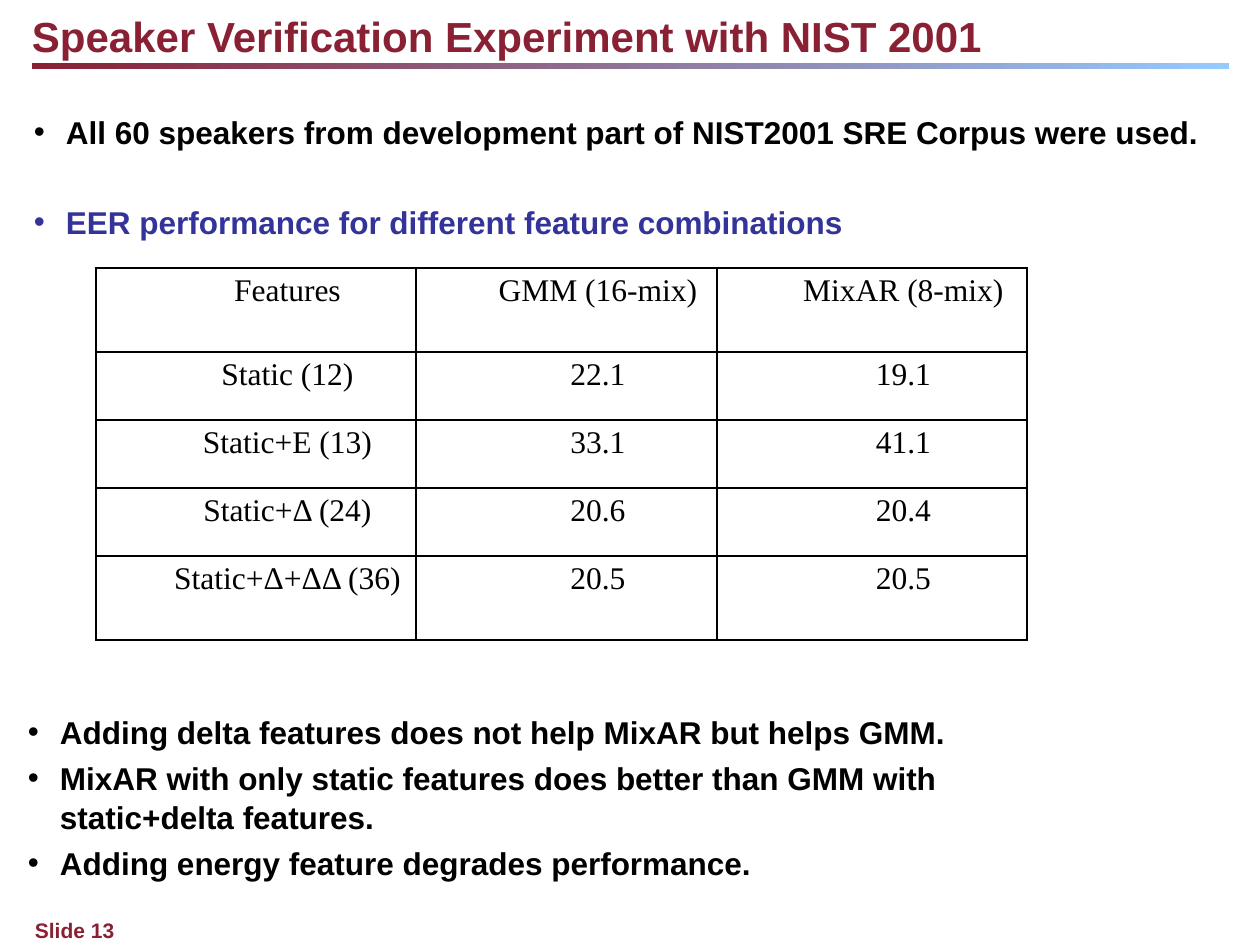
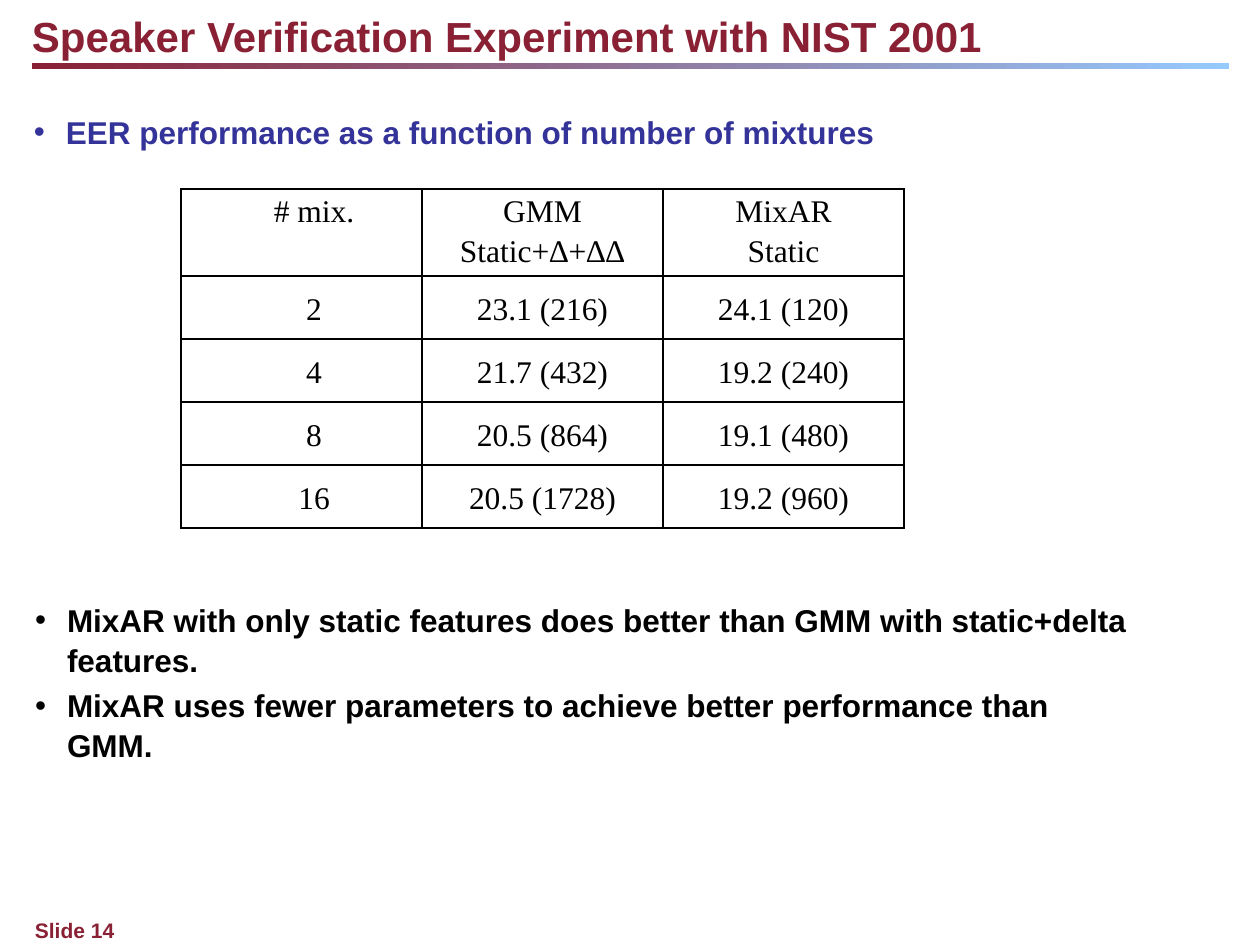
from dataclasses import dataclass

import pptx
import pptx.dml.color
import pptx.enum.shapes
import pptx.enum.text
import pptx.oxml
import pptx.oxml.ns
import pptx.util

COLORS = {"wine": "892034", "sky": "95CAFF", "blue": "333399", "black": "000000"}
SANS, SERIF = "Arial", "Times New Roman"
TITLE = "Speaker Verification Experiment with NIST 2001"
SIZE = 18
TOP = pptx.enum.text.MSO_ANCHOR.TOP
MIDDLE = pptx.enum.text.MSO_ANCHOR.MIDDLE


@dataclass(frozen=True)
class Box:
    left: int
    top: int
    width: int
    height: int


@dataclass(frozen=True)
class Point:
    text: str
    color: str = "black"
    gap: int = 6


@dataclass(frozen=True)
class Block:
    box: Box
    points: list[Point]


@dataclass(frozen=True)
class Indent:
    left: int = 0
    first: int = 0


@dataclass(frozen=True)
class Grid:
    left: int
    top: int
    cols: list[int]
    rows: list[int]
    cells: list[list[str]]
    indents: list[Indent]
    after: int
    anchor: pptx.enum.text.MSO_ANCHOR


@dataclass(frozen=True)
class Page:
    number: int
    blocks: list[Block]
    grid: Grid


BAND = Box(32, 63, 1197, 6)
HEAD = Box(32, 8, 1187, 50)
FOOT = Box(35, 916, 1124, 25)

PAGES = [
    Page(
        13,
        [
            Block(Box(34, 111, 1179, 130), [
                Point("All 60 speakers from development part of NIST2001 SRE Corpus were used."),
                Point("EER performance for different feature combinations", "blue", 50),
            ]),
            Block(Box(28, 711, 1079, 168), [
                Point("Adding delta features does not help MixAR but helps GMM."),
                Point("MixAR with only static features does better than GMM with static+delta features."),
                Point("Adding energy feature degrades performance."),
            ]),
        ],
        Grid(
            96, 268, [320, 301, 310], [84, 68, 68, 68, 84],
            [
                ["Features", "GMM (16-mix)", "MixAR (8-mix)"],
                ["Static (12)", "22.1", "19.1"],
                ["Static+E (13)", "33.1", "41.1"],
                ["Static+Δ (24)", "20.6", "20.4"],
                ["Static+Δ+ΔΔ (36)", "20.5", "20.5"],
            ],
            [Indent(134, -71)] * 3, 12, TOP,
        ),
    ),
    Page(
        14,
        [
            Block(Box(34, 111, 1179, 38), [
                Point("EER performance as a function of number of mixtures", "blue"),
            ]),
            Block(Box(35, 599, 1103, 160), [
                Point("MixAR with only static features does better than GMM with static+delta features."),
                Point("MixAR uses fewer parameters to achieve better performance than GMM."),
            ]),
        ],
        Grid(
            181, 189, [241] * 3, [87] + [63] * 4,
            [
                ["# mix.", "GMM\nStatic+∆+∆∆", "MixAR\nStatic"],
                ["2", "23.1 (216)", "24.1 (120)"],
                ["4", "21.7 (432)", "19.2 (240)"],
                ["8", "20.5 (864)", "19.1 (480)"],
                ["16", "20.5 (1728)", "19.2 (960)"],
            ],
            [Indent(0, 25), Indent(), Indent()], 0, MIDDLE,
        ),
    ),
]


def px(count: int) -> int:
    """Turn px, 126 to the inch, into EMU."""
    return round(count * 914400 / 126)


def rgb(name: str) -> pptx.dml.color.RGBColor:
    return pptx.dml.color.RGBColor.from_string(COLORS[name])


def place(shape, box: Box) -> None:
    shape.left, shape.top = px(box.left), px(box.top)
    shape.width, shape.height = px(box.width), px(box.height)


def clear(frame) -> None:
    """Wrap the text from the top left corner, with no insets."""
    frame.margin_left = frame.margin_right = 0
    frame.margin_top = frame.margin_bottom = 0
    frame.word_wrap = True
    frame.auto_size = pptx.enum.text.MSO_AUTO_SIZE.NONE
    frame.vertical_anchor = TOP


def style(para, font: str, size: int, color: str, bold: bool) -> None:
    for run in para.runs:
        run.font.name, run.font.size = font, pptx.util.Pt(size)
        run.font.color.rgb, run.font.bold = rgb(color), bold


def indent(para, left: int, first: int):
    props = para._p.get_or_add_pPr()
    props.set("marL", str(px(left)))
    props.set("indent", str(px(first)))
    return props


def label(shape, box: Box, text: str, size: int) -> None:
    place(shape, box)
    clear(shape.text_frame)
    shape.text_frame.text = text
    para = shape.text_frame.paragraphs[0]
    para.alignment = pptx.enum.text.PP_ALIGN.LEFT
    para.line_spacing, para.space_before = 1.05, 0
    style(para, SANS, size, "wine", True)


def band(slide) -> None:
    kind = pptx.enum.shapes.MSO_SHAPE.RECTANGLE
    bar = slide.shapes.add_shape(kind, 0, 0, 0, 0)
    place(bar, BAND)
    bar.shadow.inherit = False
    bar.line.fill.background()
    bar.fill.gradient()
    bar.fill.gradient_angle = 0
    for stop, name in zip(bar.fill.gradient_stops, ("wine", "sky")):
        stop.color.rgb = rgb(name)


def bullets(shape, block: Block) -> None:
    place(shape, block.box)
    frame = shape.text_frame
    clear(frame)
    frame.text = "\n".join(point.text for point in block.points)
    space = pptx.oxml.ns.nsdecls("a")
    for order, (para, point) in enumerate(zip(frame.paragraphs, block.points)):
        props = indent(para, 32, -32)
        for mark in ('buFont {} typeface="Arial"', 'buChar {} char="•"'):
            props.append(pptx.oxml.parse_xml(f"<a:{mark.format(space)}/>"))
        para.line_spacing = 1.05
        para.space_before = px(point.gap) if order else 0
        style(para, SANS, SIZE, point.color, True)


def border(cell) -> None:
    space = pptx.oxml.ns.nsdecls("a")
    for side in "LRTB":
        cell._tc.get_or_add_tcPr().append(pptx.oxml.parse_xml(
            f'<a:ln{side} {space} w="12700"><a:solidFill>'
            f'<a:srgbClr val="{COLORS["black"]}"/></a:solidFill></a:ln{side}>'))


def table(slide, grid: Grid) -> None:
    frame = slide.shapes.add_table(
        len(grid.rows), len(grid.cols), px(grid.left), px(grid.top),
        px(sum(grid.cols)), px(sum(grid.rows)))
    sheet = frame.table
    sheet.first_row = sheet.horz_banding = False
    for col, width in zip(sheet.columns, grid.cols):
        col.width = px(width)
    for row, height in zip(sheet.rows, grid.rows):
        row.height = px(height)
    for down, texts in enumerate(grid.cells):
        for across, text in enumerate(texts):
            cell = sheet.cell(down, across)
            border(cell)
            cell.fill.background()
            cell.margin_left = cell.margin_right = px(9 if across else 4)
            cell.margin_top = cell.margin_bottom = 0
            cell.vertical_anchor = grid.anchor if down else TOP
            para = cell.text_frame.paragraphs[0]
            para.text = text
            indent(para, grid.indents[across].left, grid.indents[across].first)
            para.alignment = pptx.enum.text.PP_ALIGN.CENTER
            para.line_spacing = 1.15
            para.space_after = pptx.util.Pt(grid.after)
            style(para, SERIF, SIZE, "black", False)


def build(deck, page: Page) -> None:
    slide = deck.slides.add_slide(deck.slide_layouts.get_by_name("Two Content"))
    band(slide)
    label(slide.shapes.add_textbox(0, 0, 0, 0), FOOT, f"Slide {page.number}", 12)
    label(slide.shapes.title, HEAD, TITLE, 24)
    for slot, block in enumerate(page.blocks, 1):
        bullets(slide.placeholders[slot], block)
    table(slide, page.grid)


def main() -> None:
    deck = pptx.Presentation()
    deck.slide_width, deck.slide_height = px(1260), px(945)
    for page in PAGES:
        build(deck, page)
    deck.save("out.pptx")


if __name__ == "__main__":
    main()
